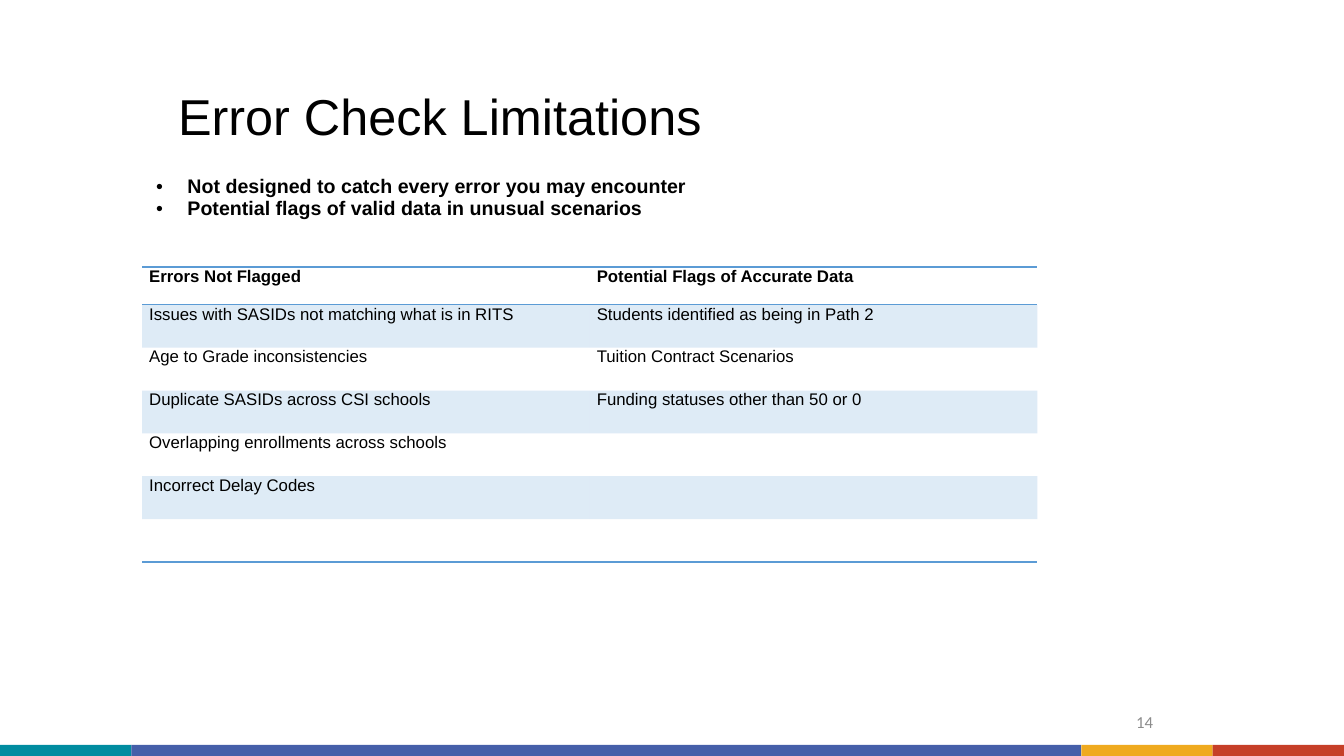
from lxml.etree import SubElement
from pptx import Presentation
from pptx.dml.color import RGBColor
from pptx.enum.shapes import MSO_SHAPE
from pptx.enum.text import MSO_ANCHOR, PP_ALIGN
from pptx.oxml.ns import qn
from pptx.util import Cm, Pt


def paint(fill, tone):
    fill.solid()
    fill.fore_color.rgb = RGBColor.from_string(tone)


def write(para, text, look):
    run = para.add_run()
    run.text = text
    paint(run.font.fill, look["tone"])
    for key, value in look.items():
        if key != "tone":
            setattr(run.font, key, value)


deck = Presentation()
deck.slide_width, deck.slide_height = Cm(33.87), Cm(19.05)
slide = deck.slides.add_slide(deck.slide_layouts[6])
shapes = slide.shapes

BLUE, WHITE, BLACK = "5B9BD5", "FFFFFF", "000000"
title = {"name": "Arial", "size": Pt(36), "tone": BLACK}
point = {"name": "Arial", "size": Pt(14), "tone": BLACK, "bold": True}
body = {"name": "Arial", "size": Pt(12), "tone": BLACK, "bold": False}
head = {**body, "bold": True}
number = {"name": "Calibri", "size": Pt(12), "tone": "8C8C8C"}

# Footer stripe
left = 0
for width, tone in [(3.31, "008CA0"), (23.94, "455FA9"),
                    (3.31, "EFAA1F"), (3.31, "C63F28")]:
    bar = shapes.add_shape(MSO_SHAPE.RECTANGLE, Cm(left), Cm(18.77),
                           Cm(width), Cm(0.28))
    bar.shadow.inherit = False
    paint(bar.fill, tone)
    bar.line.fill.background()
    left += width

# Title and slide number
for text, place, look, form, anchor in [
    ("Error Check Limitations", (4.24, 0.76, 23.01, 3.18), title,
     {"line_spacing": 0.9}, MSO_ANCHOR.BOTTOM),
    ("14", (27.79, 17.68, 1.52, 1.17), number,
     {"alignment": PP_ALIGN.RIGHT}, MSO_ANCHOR.TOP),
]:
    frame = shapes.add_textbox(*map(Cm, place)).text_frame
    frame.word_wrap = True
    frame.vertical_anchor = anchor
    for side in ("left", "top", "right", "bottom"):
        setattr(frame, "margin_" + side, Cm(0.25))
    para = frame.paragraphs[0]
    for key, value in form.items():
        setattr(para, key, value)
    write(para, text, look)

# Tables: the bullet panel behind, the error list in front
panel = shapes.add_table(2, 1, Cm(3.58), Cm(4.29), Cm(23.24), Cm(10.67)).table
panel.rows[0].height, panel.rows[1].height = Cm(4.57), Cm(6.1)
errors = shapes.add_table(7, 2, Cm(3.58), Cm(6.73), Cm(22.56), Cm(7.43)).table
for index, row in enumerate(errors.rows):
    row.height = Cm(1.08 if index else 0.95)

# Cell borders and fills
for grid, ruled, edge in [(panel, {0, 1, 2}, WHITE), (errors, {0, 1, 7}, BLUE)]:
    grid.first_row = grid.horz_banding = False
    for index, row in enumerate(grid.rows):
        for cell in row.cells:
            props = cell._tc.get_or_add_tcPr()
            for side, rule in [("L", None), ("R", None),
                               ("T", index), ("B", index + 1)]:
                line = SubElement(props, qn("a:ln" + side), w=str(Pt(1)))
                if rule in ruled:
                    solid = SubElement(line, qn("a:solidFill"))
                    SubElement(solid, qn("a:srgbClr"), val=edge)
                else:
                    SubElement(line, qn("a:noFill"))
            if grid is errors and index % 2:
                paint(cell.fill, BLUE)
                color = props.find(qn("a:solidFill")).find(qn("a:srgbClr"))
                SubElement(color, qn("a:alpha"), val="20000")
            else:
                cell.fill.background()

# Bullets
frame = panel.cell(0, 0).text_frame
for index, text in enumerate([
    "Not designed to catch every error you may encounter",
    "Potential flags of valid data in unusual scenarios",
]):
    para = frame.add_paragraph() if index else frame.paragraphs[0]
    props = para._p.get_or_add_pPr()
    props.set("marL", str(Cm(0.89)))
    props.set("indent", str(Cm(-0.79)))
    SubElement(props, qn("a:buFont"), typeface="Arial")
    SubElement(props, qn("a:buChar"), char="•")
    write(para, text, point)

# Error list
rows = [
    ("Errors Not Flagged", "Potential Flags of Accurate Data"),
    ("Issues with SASIDs not matching what is in RITS",
     "Students identified as being in Path 2"),
    ("Age to Grade inconsistencies", "Tuition Contract Scenarios"),
    ("Duplicate SASIDs across CSI schools",
     "Funding statuses other than 50 or 0"),
    ("Overlapping enrollments across schools", ""),
    ("Incorrect Delay Codes", ""),
    ("", ""),
]
pads = {"margin_left": Cm(0.18), "margin_right": Cm(0.18),
        "margin_top": 0, "margin_bottom": 0}
for index, texts in enumerate(rows):
    for cell, text in zip(errors.rows[index].cells, texts):
        for key, value in pads.items():
            setattr(cell, key, value)
        if text:
            write(cell.text_frame.paragraphs[0], text, body if index else head)

deck.save("out.pptx")
